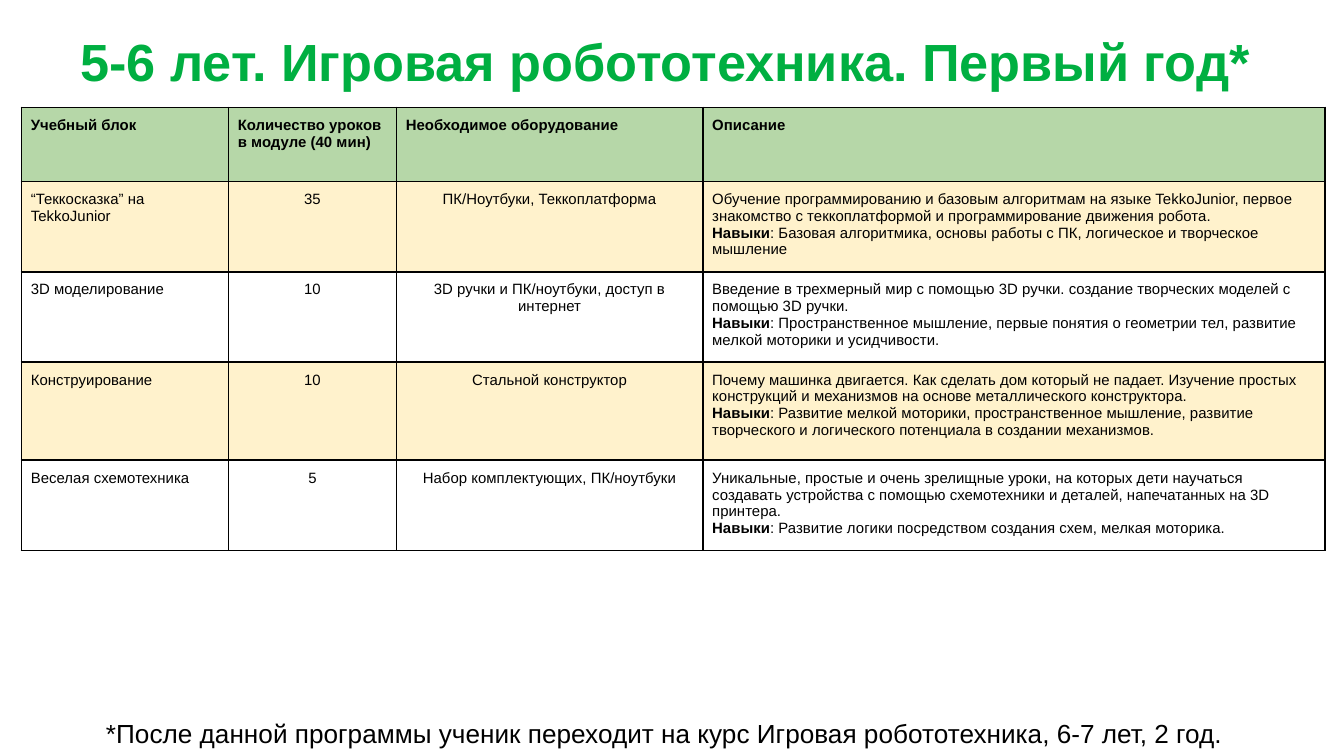
from lxml import etree
from pptx import Presentation
from pptx.dml.color import RGBColor
from pptx.enum.text import MSO_ANCHOR, MSO_AUTO_SIZE, PP_ALIGN
from pptx.oxml.ns import qn
from pptx.util import Inches, Pt

LEFT, CENTER = PP_ALIGN.LEFT, PP_ALIGN.CENTER
TOP, MIDDLE = MSO_ANCHOR.TOP, MSO_ANCHOR.MIDDLE
GROW = MSO_AUTO_SIZE.SHAPE_TO_FIT_TEXT

WIDTH = 10
HEIGHT = WIDTH * 9 / 16
FONT = "Arial"
GREEN, BLACK, WHITE = "00AF41", "000000", "FFFFFF"
HEADER_FILL, BAND_FILL = "B6D7A8", "FFF2CC"
MARGINS = ("margin_left", "margin_top", "margin_right", "margin_bottom")

# Column and row sizes of the table, in inches
COLUMNS = (1.54, 1.25, 2.28, 4.63)
ROWS = (0.55, 0.66, 0.46, 0.73, 0.65)
COLUMN_ALIGNS = (LEFT, CENTER, CENTER, LEFT)
CELL_SIZE = 8

TITLE = "5-6 лет. Игровая робототехника. Первый год*"
FOOTNOTE = ("*После данной программы ученик переходит на курс "
            "Игровая робототехника, 6-7 лет, 2 год.")
HEADERS = ("Учебный блок", "Количество уроков в модуле (40 мин)",
           "Необходимое оборудование", "Описание")
SKILLS = "Навыки"

# Block, lessons, equipment, description, skills
BLOCKS = (
    ("“Теккосказка” на TekkoJunior", "35", "ПК/Ноутбуки, Теккоплатформа",
     "Обучение программированию и базовым алгоритмам на языке TekkoJunior, "
     "первое знакомство с теккоплатформой и программирование движения робота.",
     "Базовая алгоритмика, основы работы с ПК, логическое и творческое мышление"),
    ("3D моделирование", "10", "3D ручки и ПК/ноутбуки, доступ в интернет",
     "Введение в трехмерный мир с помощью 3D ручки. создание творческих "
     "моделей с помощью 3D ручки.",
     "Пространственное мышление, первые понятия о геометрии тел, развитие "
     "мелкой моторики и усидчивости."),
    ("Конструирование", "10", "Стальной конструктор",
     "Почему машинка двигается. Как сделать дом который не падает. Изучение "
     "простых конструкций и механизмов на основе металлического конструктора.",
     "Развитие мелкой моторики, пространственное мышление, развитие "
     "творческого и логического потенциала в создании механизмов."),
    ("Веселая схемотехника", "5", "Набор комплектующих, ПК/ноутбуки",
     "Уникальные, простые и очень зрелищные уроки, на которых дети научаться "
     "создавать устройства с помощью схемотехники и деталей, напечатанных на "
     "3D принтера.",
     "Развитие логики посредством создания схем, мелкая моторика."),
)


def color(value):
    return RGBColor.from_string(value)


def set_all(target, values):
    for name, value in values.items():
        setattr(target, name, value)


def add_span(para, text, size, bold=False, ink=BLACK):
    span = para.add_run()
    span.text = text
    set_all(span.font, {"name": FONT, "size": Pt(size), "bold": bold})
    span.font.color.rgb = color(ink)


def add_line(page, box, text, size, padding, frame_format, indent=0, **look):
    """One line of text in a box of (left, top, width, height)."""
    frame = page.shapes.add_textbox(*map(Inches, box)).text_frame
    set_all(frame, dict(zip(MARGINS, map(Inches, padding))))
    set_all(frame, {"word_wrap": True, **frame_format})
    para = frame.paragraphs[0]
    if indent:
        properties = para._p.get_or_add_pPr()
        properties.set("marL", str(Inches(indent)))
        properties.set("indent", "0")
    add_span(para, text, size, **look)


def add_borders(cell):
    properties = cell._tc.get_or_add_tcPr()
    for position, side in enumerate(("lnL", "lnR", "lnT", "lnB")):
        line = etree.Element(qn(f"a:{side}"), w=str(Pt(1)))
        fill = etree.SubElement(line, qn("a:solidFill"))
        etree.SubElement(fill, qn("a:srgbClr"), val=BLACK)
        properties.insert(position, line)


def fill_cell(cell, paragraphs, align, fill):
    """Each paragraph is a list of (text, bold) spans."""
    set_all(cell, {name: Inches(0.07) for name in MARGINS})
    cell.vertical_anchor = TOP
    cell.fill.solid()
    cell.fill.fore_color.rgb = color(fill)
    add_borders(cell)
    frame = cell.text_frame
    for index, spans in enumerate(paragraphs):
        para = frame.add_paragraph() if index else frame.paragraphs[0]
        para.alignment = align
        for text, bold in spans:
            add_span(para, text, CELL_SIZE, bold)
        # The paragraph end keeps the text size, so the row stays low
        etree.SubElement(para._p, qn("a:endParaRPr"), sz=str(CELL_SIZE * 100))


def add_program_table(page, box):
    frame = page.shapes.add_table(len(ROWS), len(COLUMNS), *map(Inches, box))
    table = frame.table
    for column, share in zip(table.columns, COLUMNS):
        column.width = Inches(box[2] * share / sum(COLUMNS))
    for row, share in zip(table.rows, ROWS):
        row.height = Inches(box[3] * share / sum(ROWS))

    # Header row
    for index, text in enumerate(HEADERS):
        fill_cell(table.cell(0, index), [[(text, True)]], LEFT, HEADER_FILL)

    # One banded row for each study block
    for number, (*texts, skills) in enumerate(BLOCKS, 1):
        contents = [[[(text, False)]] for text in texts]
        contents[-1].append([(SKILLS, True), (f": {skills}", False)])
        fill = BAND_FILL if number % 2 else WHITE
        for index, (content, align) in enumerate(zip(contents, COLUMN_ALIGNS)):
            fill_cell(table.cell(number, index), content, align, fill)


def main():
    deck = Presentation()
    set_all(deck, {"slide_width": Inches(WIDTH), "slide_height": Inches(HEIGHT)})
    page = deck.slides.add_slide(deck.slide_layouts[6])

    # Title
    add_line(page, (0, 0.11, 0.96 * WIDTH, 0.68), TITLE, 28,
             (0.1,) * 4, {"vertical_anchor": MIDDLE}, 0.5, bold=True, ink=GREEN)
    # Program table
    add_program_table(page, (0.16, 0.8, sum(COLUMNS), sum(ROWS)))
    # Footnote
    add_line(page, (0.69, 5.29, WIDTH - 2 * 0.69, 0.34), FOOTNOTE, 14,
             (0.1, 0.05, 0.1, 0.05), {"vertical_anchor": TOP, "auto_size": GROW})
    deck.save("out.pptx")


if __name__ == "__main__":
    main()
